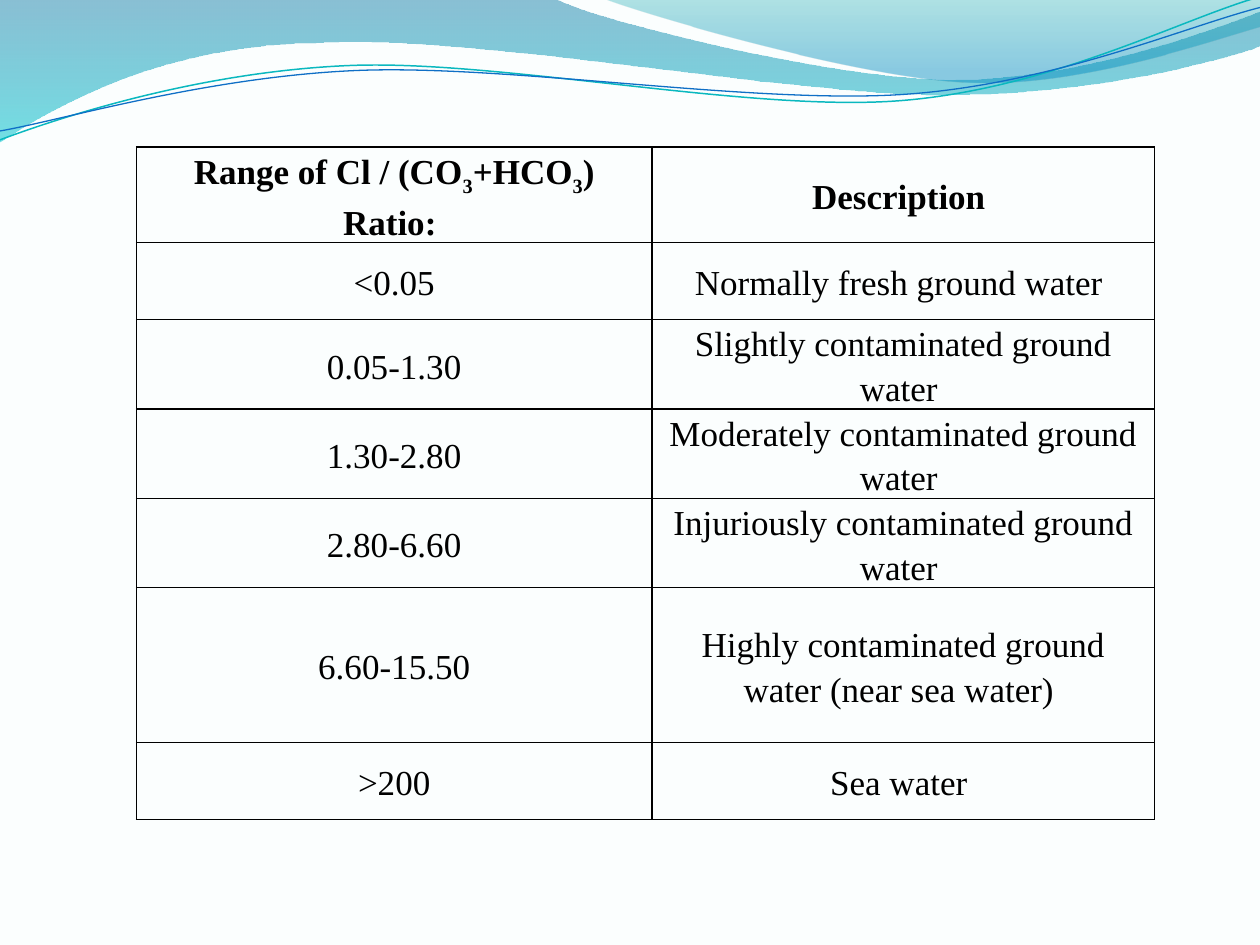
from math import cos, radians, sin

from lxml.etree import SubElement
from pptx import Presentation
from pptx.dml.color import RGBColor
from pptx.enum.text import MSO_ANCHOR, PP_ALIGN
from pptx.oxml.ns import qn
from pptx.util import Inches, Pt

LINE_TILT = -2.7
COLUMN_WIDTHS = [4.09, 3.99]
ROW_HEIGHTS = [0.61, 0.61, 0.61, 0.61, 0.61, 1.23, 0.61]
ROWS = [
    (["Range of Cl / (CO", "3", "+HCO", "3", ") Ratio: "], ["Description "]),
    (["<0.05"], ["Normally fresh ground water "]),
    (["0.05-1.30"], ["Slightly contaminated ground water "]),
    (["1.30-2.80"], ["Moderately contaminated ground water "]),
    (["2.80-6.60"], ["Injuriously contaminated ground water "]),
    (["6.60-15.50"], ["Highly contaminated ground water (near sea water) "]),
    ([">200"], ["Sea water "]),
]
LARGE_WAVE = [
    [(0, -0.01)], [(4.4, -0.01)], [(4.76, 0.17), (6.64, 0.63), (7.58, 0.63)],
    [(8.53, 0.63), (9.58, 0.26), (10, 0.09)], [(10.01, 0.36)],
    [(9.83, 0.44), (8.7, 0.76), (7.46, 0.75)],
    [(6.22, 0.75), (3.82, 0.28), (2.57, 0.34)],
    [(1.29, 0.35), (0.46, 0.83), (-0.01, 1.13)], [(0, -0.01)],
]
SMALL_WAVE = [
    [(4.79, -0.01)], [(5.09, 0.11), (6.82, 0.62), (7.69, 0.65)],
    [(8.56, 0.69), (9.61, 0.32), (10, 0.21)], [(10, 0)], [(4.79, -0.01)],
]
TEAL_LINE = [
    [(0, 1.11)], [(0.48, 0.93), (1.58, 0.57), (2.77, 0.52)],
    [(3.95, 0.47), (5.93, 0.89), (7.13, 0.8)],
    [(8.33, 0.71), (9.38, 0.15), (9.98, -0.02)],
]
BLUE_LINE = [
    [(0, 1.04)], [(0.47, 0.96), (1.64, 0.61), (2.83, 0.56)],
    [(4.03, 0.51), (5.97, 0.83), (7.17, 0.75)],
    [(8.36, 0.67), (9.41, 0.21), (10, 0.06)],
]


def color(hex_string):
    """Turn a hex string into a colour."""
    return RGBColor.from_string(hex_string)


def turn(segments, center, degrees):
    """Turn all points clockwise around a center."""
    cosine, sine = cos(radians(degrees)), sin(radians(degrees))
    center_x, center_y = center
    return [
        [
            (
                center_x + (x - center_x) * cosine - (y - center_y) * sine,
                center_y + (x - center_x) * sine + (y - center_y) * cosine,
            )
            for x, y in segment
        ]
        for segment in segments
    ]


def add_outline(slide, segments, close):
    """Draw an outline of straight lines and cubic Bezier curves."""
    points = [(Inches(x), Inches(y)) for segment in segments for x, y in segment]
    builder = slide.shapes.build_freeform(*points[0])
    builder.add_line_segments(points[1:], close=close)
    shape = builder.convert_to_shape()
    shape.shadow.inherit = False
    lines = iter(list(shape._element.iter(qn("a:lnTo"))))
    for segment in segments[1:]:
        steps = [next(lines) for _ in segment]
        if len(steps) == 3:
            parent = steps[0].getparent()
            curve = SubElement(parent, qn("a:cubicBezTo"))
            steps[0].addprevious(curve)
            for step in steps:
                curve.append(step[0])
                parent.remove(step)
    return shape


def add_wave(slide, segments, stops):
    """Add a wave with a translucent vertical gradient."""
    shape = add_outline(slide, segments, True)
    shape.line.fill.background()
    shape.fill.gradient()
    shape.fill.gradient_angle = 270
    for stop, (position, hex_string, _) in zip(shape.fill.gradient_stops, stops):
        stop.position = position
        stop.color.rgb = color(hex_string)
    for element, (_, _, opacity) in zip(shape._element.iter(qn("a:srgbClr")), stops):
        SubElement(element, qn("a:alpha"), val=str(opacity * 1000))


def add_curve(slide, segments, center, hex_string, width):
    """Add a thin open curve in a tilted frame."""
    shape = add_outline(slide, turn(segments, center, -LINE_TILT), False)
    shape.rotation = LINE_TILT
    shape.fill.background()
    shape.line.color.rgb = color(hex_string)
    shape.line.width = Pt(width)


def add_borders(cell, hex_string, width):
    """Give a cell a solid border on all four sides."""
    properties = cell._tc.get_or_add_tcPr()
    for side in ("a:lnL", "a:lnR", "a:lnT", "a:lnB"):
        line = SubElement(properties, qn(side), w=str(Pt(width)))
        SubElement(SubElement(line, qn("a:solidFill")), qn("a:srgbClr"), val=hex_string)


def fill_cell(cell, pieces, bold):
    """Write the pieces into a cell, with every second piece as a subscript."""
    add_borders(cell, "000000", 1)
    cell.fill.background()
    cell.vertical_anchor = MSO_ANCHOR.MIDDLE
    cell.margin_left = cell.margin_right = Inches(0.07)
    cell.margin_top = cell.margin_bottom = 0
    paragraph = cell.text_frame.paragraphs[0]
    paragraph.alignment = PP_ALIGN.CENTER
    paragraph.line_spacing = 1.15
    paragraph.font.name = "Times New Roman"
    paragraph.font.size = Pt(20)
    paragraph.font.bold = bold
    paragraph.font.color.rgb = color("000000")
    for index, piece in enumerate(pieces):
        run = paragraph.add_run()
        run.text = piece
        if index % 2:
            run._r.get_or_add_rPr().set("baseline", "-25000")


def add_ratio_table(slide):
    """Add the table of ratio ranges and water descriptions."""
    frame = slide.shapes.add_table(
        len(ROWS), len(COLUMN_WIDTHS), Inches(13 / 12), Inches(7 / 6),
        Inches(sum(COLUMN_WIDTHS)), Inches(sum(ROW_HEIGHTS)),
    )
    table = frame.table
    table.first_row = table.horz_banding = False
    for column, width in zip(table.columns, COLUMN_WIDTHS):
        column.width = Inches(width)
    for row_index, (row, height) in enumerate(zip(table.rows, ROW_HEIGHTS)):
        row.height = Inches(height)
        for cell, pieces in zip(row.cells, ROWS[row_index]):
            fill_cell(cell, pieces, row_index == 0)
    frame.height = Inches(5.52)


def main():
    """Build and save the slide."""
    presentation = Presentation()
    presentation.slide_width, presentation.slide_height = Inches(10), Inches(7.5)
    slide = presentation.slides.add_slide(presentation.slide_layouts[6])
    slide.background.fill.solid()
    slide.background.fill.fore_color.rgb = color("FBFEFE")
    add_wave(slide, LARGE_WAVE, [(0, "0074A1", 45), (1, "00C6CF", 55)])
    add_wave(slide, SMALL_WAVE, [(0, "00A1A9", 30), (0.8, "008BBF", 45)])
    add_curve(slide, TEAL_LINE, (4.99, 0.58), "0AB8BF", 0.85)
    add_curve(slide, BLUE_LINE, (5, 0.59), "0F6FC6", 0.75)
    add_ratio_table(slide)
    presentation.save("out.pptx")


if __name__ == "__main__":
    main()
